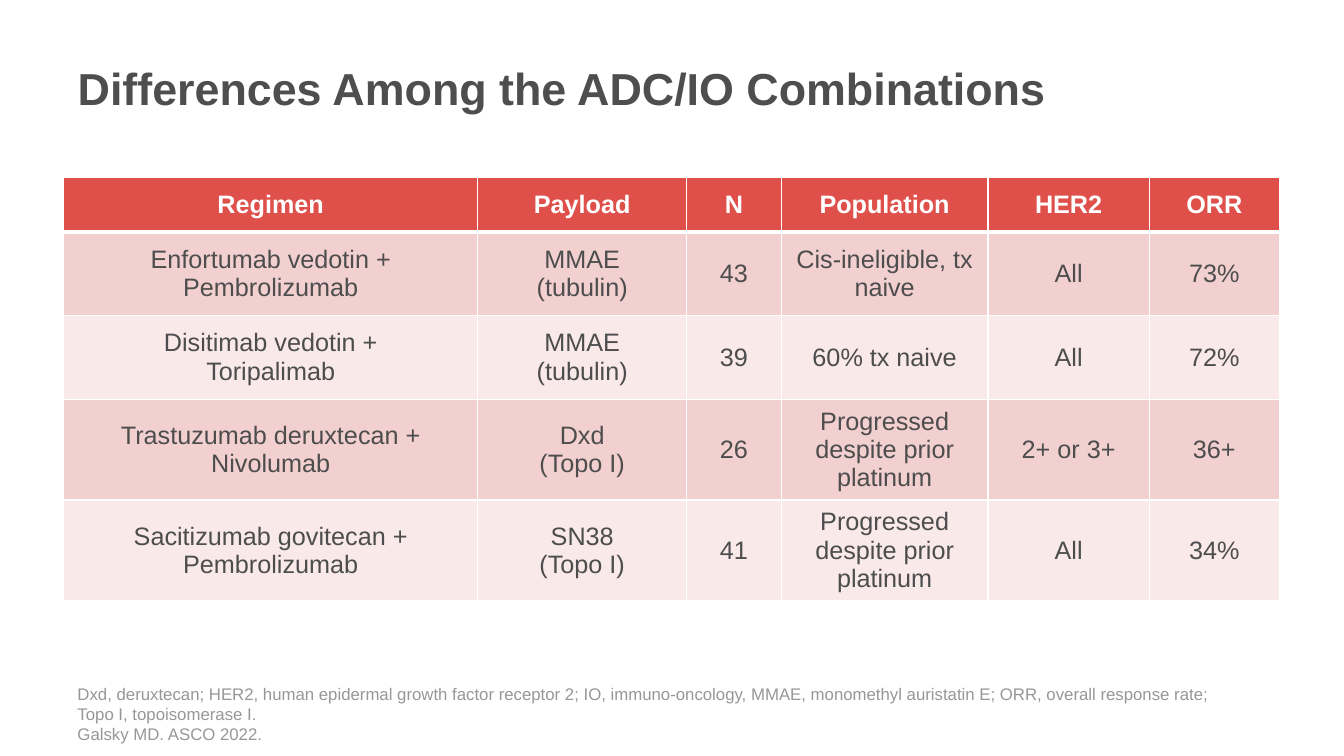
from dataclasses import dataclass

from lxml import etree
from pptx import Presentation
from pptx.dml.color import RGBColor
from pptx.enum.text import MSO_ANCHOR, PP_ALIGN
from pptx.oxml.ns import qn
from pptx.util import Inches, Pt

LEFT, CENTER = PP_ALIGN.LEFT, PP_ALIGN.CENTER
MIDDLE, BOTTOM = MSO_ANCHOR.MIDDLE, MSO_ANCHOR.BOTTOM
TITLE_ONLY = 5


@dataclass(frozen=True)
class Theme:
    font: str = "Arial"
    title: str = "4D4E4D"
    body: str = "4D4D4D"
    note: str = "979797"
    white: str = "FFFFFF"
    header: str = "DF504B"
    bands: tuple = ("F3D0D0", "F9E9E9")
    title_size: int = 32
    table_size: int = 18
    note_size: int = 12
    rule: int = 1
    header_rule: int = 3


class SlideBuilder:
    def __init__(self, slide, theme):
        self.s = slide
        self.theme = theme

    def add_lines(self, tf, lines, size, color, bold=False, align=LEFT):
        for i, line in enumerate(lines):
            p = tf.paragraphs[0] if i == 0 else tf.add_paragraph()
            p.alignment = align
            r = p.add_run()
            r.text = line
            r.font.name = self.theme.font
            r.font.size = Pt(size)
            r.font.bold = bold
            r.font.color.rgb = RGBColor.from_string(color)

    def title(self, text, box):
        sp = self.s.shapes.title
        sp.left, sp.top, sp.width, sp.height = map(Inches, box)
        tf = sp.text_frame
        tf.word_wrap = True
        tf.vertical_anchor = MIDDLE
        self.add_lines(tf, [text], self.theme.title_size, self.theme.title, bold=True)

    def footnote(self, lines, box):
        tf = self.s.shapes.add_textbox(*map(Inches, box)).text_frame
        tf.word_wrap = True
        tf.vertical_anchor = BOTTOM
        self.add_lines(tf, lines, self.theme.note_size, self.theme.note)

    def borders(self, cell, top, bottom):
        tcPr = cell._tc.get_or_add_tcPr()
        rule = self.theme.rule
        sides = (("a:lnL", rule), ("a:lnR", rule), ("a:lnT", top), ("a:lnB", bottom))
        for i, (tag, width) in enumerate(sides):
            ln = etree.Element(qn(tag), w=str(Pt(width)))
            fill = etree.SubElement(ln, qn("a:solidFill"))
            etree.SubElement(fill, qn("a:srgbClr"), val=self.theme.white)
            tcPr.insert(i, ln)

    def table(self, rows, left, top, widths, heights):
        t = self.theme
        frame = self.s.shapes.add_table(
            len(rows), len(widths), Inches(left), Inches(top),
            Inches(sum(widths)), Inches(sum(heights)))
        table = frame.table
        for column, width in zip(table.columns, widths):
            column.width = Inches(width)
        for i, (row, height) in enumerate(zip(rows, heights)):
            table.rows[i].height = Inches(height)
            head = i == 0
            fill = t.header if head else t.bands[(i - 1) % len(t.bands)]
            for j, text in enumerate(row):
                cell = table.cell(i, j)
                cell.vertical_anchor = MIDDLE
                cell.fill.solid()
                cell.fill.fore_color.rgb = RGBColor.from_string(fill)
                self.borders(cell, t.header_rule if i == 1 else t.rule,
                             t.header_rule if head else t.rule)
                self.add_lines(cell.text_frame, text.split("\n"), t.table_size,
                               t.white if head else t.body, head, CENTER)


ROWS = [
    ("Regimen", "Payload", "N", "Population", "HER2", "ORR"),
    ("Enfortumab vedotin +\nPembrolizumab", "MMAE\n(tubulin)", "43",
     "Cis-ineligible, tx\nnaive", "All", "73%"),
    ("Disitimab vedotin +\nToripalimab", "MMAE\n(tubulin)", "39",
     "60% tx naive", "All", "72%"),
    ("Trastuzumab deruxtecan +\nNivolumab", "Dxd\n(Topo I)", "26",
     "Progressed\ndespite prior\nplatinum", "2+ or 3+", "36+"),
    ("Sacitizumab govitecan +\nPembrolizumab", "SN38\n(Topo I)", "41",
     "Progressed\ndespite prior\nplatinum", "All", "34%"),
]
NOTES = [
    "Dxd, deruxtecan; HER2, human epidermal growth factor receptor 2; "
    "IO, immuno-oncology, MMAE, monomethyl auristatin E; "
    "ORR, overall response rate; Topo I, topoisomerase I.",
    "Galsky MD. ASCO 2022.",
]


def main():
    prs = Presentation()
    prs.slide_width, prs.slide_height = Inches(13.33), Inches(7.5)
    s = prs.slides.add_slide(prs.slide_layouts[TITLE_ONLY])
    builder = SlideBuilder(s, Theme())
    builder.title("Differences Among the ADC/IO Combinations", (0.67, 0.22, 11.75, 1.3))
    builder.footnote(NOTES, (0.67, 6.95, 11.75, 0.48))
    builder.table(ROWS, 0.63, 1.76, (4.11, 2.07, 0.94, 2.05, 1.6, 1.29),
                  [0.54] + [0.83] * 4)
    prs.save("out.pptx")


if __name__ == "__main__":
    main()
